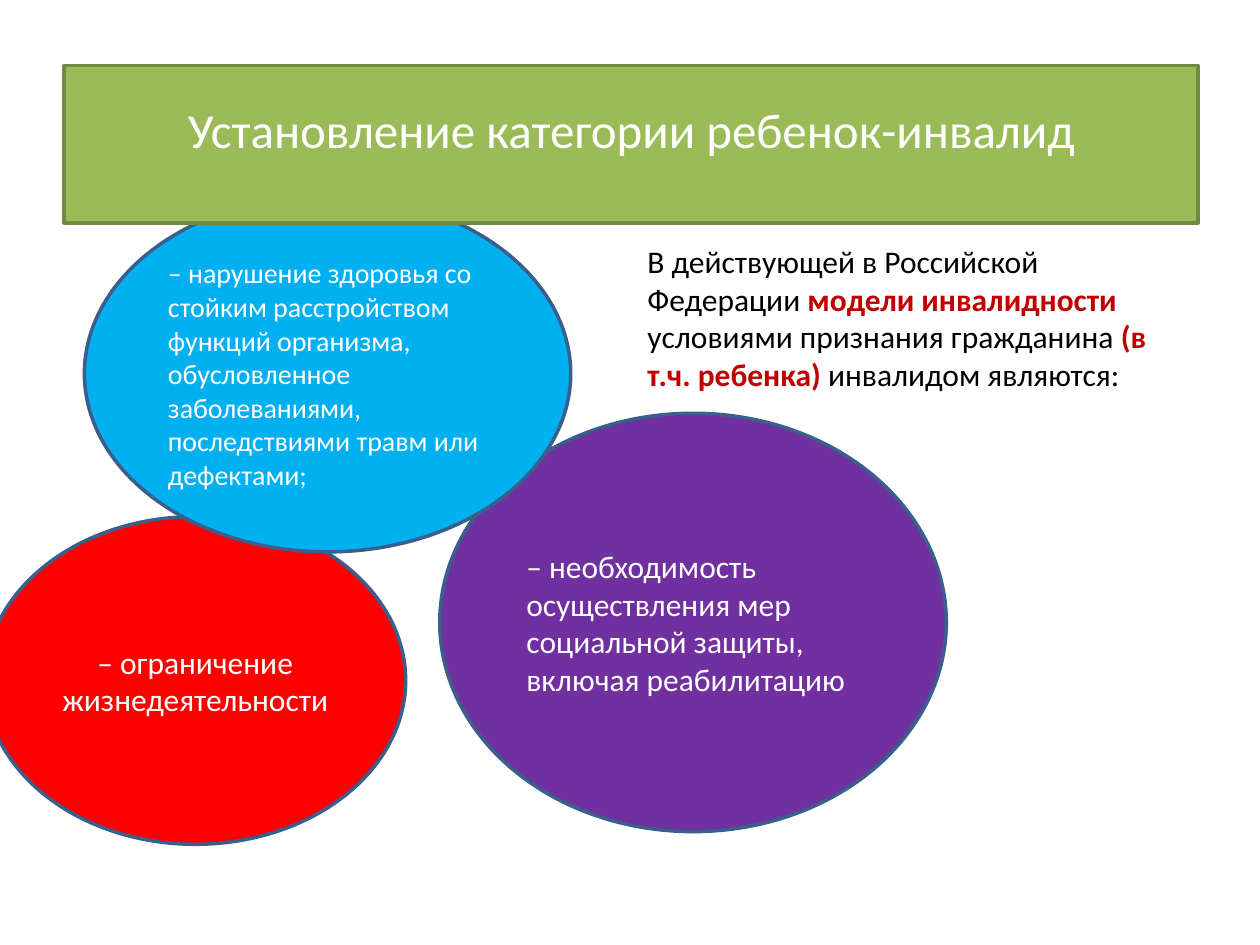
from pptx import Presentation
from pptx.dml.color import RGBColor
from pptx.enum.shapes import MSO_SHAPE
from pptx.enum.text import MSO_ANCHOR, PP_ALIGN
from pptx.util import Inches, Pt

OVAL, BAR = MSO_SHAPE.OVAL, MSO_SHAPE.RECTANGLE
LEFT, CENTER = PP_ALIGN.LEFT, PP_ALIGN.CENTER
TOP, MIDDLE = MSO_ANCHOR.TOP, MSO_ANCHOR.MIDDLE

THEME = {
    "font": "Calibri",
    "outline": 2,
    "title": 28, "body": 18, "detail": 16,
    "white": "FFFFFF", "black": "000000", "accent": "C00000",
    "red": "FF0000", "purple": "7030A0", "blue": "00B0F0", "green": "9BBB59",
    "oval_edge": "3A5F8C", "bar_edge": "738A42",
}

# Boxes are left, top, width, height as percentages of the slide.
PANELS = [
    {"text": "– ограничение жизнедеятельности",
     "box": (-1.2, 54.67, 33.4, 34.67), "form": OVAL, "fill": "red",
     "edge": "oval_edge", "size": "body", "align": CENTER},
    {"text": "– необходимость осуществления мер социальной защиты, включая реабилитацию",
     "box": (34.9, 43.73, 40.2, 44.27), "form": OVAL, "fill": "purple",
     "edge": "oval_edge", "size": "body", "align": LEFT},
    {"text": "– нарушение здоровья со стойким расстройством функций организма, "
             "обусловленное заболеваниями, последствиями травм или дефектами;",
     "box": (6.7, 20.67, 38.6, 37.73), "form": OVAL, "fill": "blue",
     "edge": "oval_edge", "size": "detail", "align": LEFT},
    {"text": "Установление категории ребенок-инвалид",
     "box": (5.1, 6.93, 90, 16.67), "form": BAR, "fill": "green",
     "edge": "bar_edge", "size": "title", "align": CENTER,
     "frame": {"margin_bottom": Inches(0.3)}},
]

INTRO_BOX = (50.4, 24.93, 42.9, 17.47)
INTRO = [
    ("В действующей в Российской Федерации ", False),
    ("модели инвалидности ", True),
    ("условиями признания гражданина ", False),
    ("(в т.ч. ребенка) ", True),
    ("инвалидом являются:", False),
]


def color(name):
    return RGBColor.from_string(THEME[name])


def apply(target, values):
    for name, value in values.items():
        setattr(target, name, value)


def place(box):
    extents = (deck.slide_width, deck.slide_height) * 2
    return [int(share / 100 * extent) for share, extent in zip(box, extents)]


def write(frame, phrases, size, align, layout):
    apply(frame, {"word_wrap": True, **layout})
    paragraph = frame.paragraphs[0]
    paragraph.alignment = align
    for wording, ink, bold in phrases:
        run = paragraph.add_run()
        run.text = wording
        apply(run.font, {"name": THEME["font"], "size": Pt(THEME[size]), "bold": bold})
        run.font.color.rgb = color(ink)


def add_panel(panel):
    shape = slide.shapes.add_shape(panel["form"], *place(panel["box"]))
    shape.shadow.inherit = False
    shape.fill.solid()
    shape.fill.fore_color.rgb = color(panel["fill"])
    shape.line.color.rgb = color(panel["edge"])
    shape.line.width = Pt(THEME["outline"])
    write(shape.text_frame, [(panel["text"], "white", False)], panel["size"],
          panel["align"], {"vertical_anchor": MIDDLE, **panel.get("frame", {})})


deck = Presentation()
apply(deck, {"slide_width": Inches(10), "slide_height": Inches(7.5)})
slide = deck.slides.add_slide(deck.slide_layouts[6])

for panel in PANELS:
    add_panel(panel)

intro = slide.shapes.add_textbox(*place(INTRO_BOX))
phrases = [(wording, "accent" if strong else "black", strong) for wording, strong in INTRO]
write(intro.text_frame, phrases, "body", LEFT, {"vertical_anchor": TOP})

deck.save("out.pptx")
